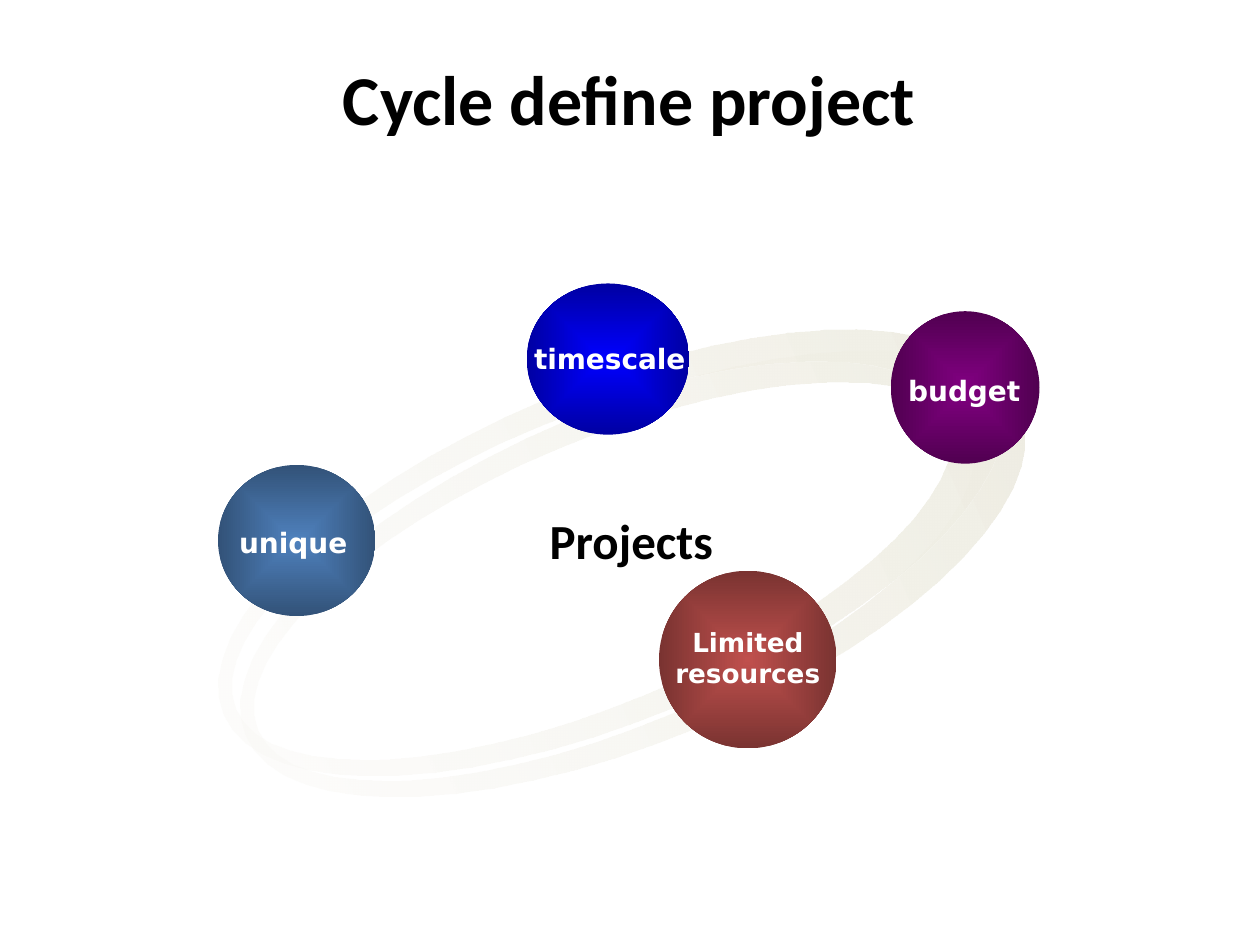
from dataclasses import dataclass
from math import cos, pi, sin

from lxml.etree import SubElement
from pptx import Presentation
from pptx.dml.color import RGBColor
from pptx.enum.shapes import MSO_SHAPE as Preset
from pptx.enum.text import MSO_AUTO_SIZE as AutoSize, PP_ALIGN as Align
from pptx.oxml.ns import qn
from pptx.util import Inches, Pt


@dataclass(frozen=True)
class Theme:
    heading_font: str = "Calibri"
    label_font: str = "DejaVu Sans"
    dark: str = "000000"
    light: str = "FFFFFF"
    ring_start: str = "FAF9F6"
    ring_end: str = "EEECE1"
    title_size: int = 40
    centre_size: int = 28
    label_size: int = 16
    small_size: int = 15
    space_size: int = 18


@dataclass(frozen=True)
class Box:
    left: float
    top: float
    width: float
    height: float

    def lengths(self):
        return [Inches(n) for n in (self.left, self.top, self.width, self.height)]


@dataclass(frozen=True)
class Stop:
    position: int
    color: str
    effect: str = ""
    percent: float = 100


@dataclass(frozen=True)
class Ball:
    box: Box
    color: str


@dataclass(frozen=True)
class Label:
    box: Box
    runs: tuple[tuple[str, int], ...]
    font: str = Theme.label_font
    color: str = Theme.light
    align: Align | None = None
    wrap: bool = True


THEME = Theme()
RING_ANGLE = 337.4
RING_POINTS = 60
RINGS = (Box(1.69, 3.23, 6.66, 2.65), Box(1.52, 3.06, 6.66, 2.65))
HOLE_SHIFT = -0.16
HOLE_RADII = (3.06, 1.14)
BALL_SHADE = 35.6

BALLS = (
    Ball(Box(4.18, 2.25, 1.29, 1.2), "0000FF"),
    Ball(Box(1.73, 3.69, 1.25, 1.2), "4F81BD"),
    Ball(Box(5.23, 4.53, 1.41, 1.41), "C0504D"),
    Ball(Box(7.07, 2.47, 1.18, 1.21), "800080"),
)

TITLE = Label(Box(2.56, 0.39, 4.8, 0.77), (("Cycle define project", THEME.title_size),),
              THEME.heading_font, THEME.dark, Align.RIGHT, False)
LABELS = (
    Label(Box(1.8, 4.12, 1.17, 0.37), (("unique", THEME.label_size),)),
    Label(Box(4.14, 2.66, 1.64, 0.37), (("timescale", THEME.label_size),)),
    Label(Box(7.11, 2.89, 1.17, 0.4),
          ((" ", THEME.space_size), ("budget", THEME.label_size)), wrap=False),
    Label(Box(5.23, 4.92, 1.41, 0.61), (("Limited resources", THEME.small_size),),
          align=Align.CENTER),
    Label(Box(3.75, 4, 2.52, 0.57), (("Projects", THEME.centre_size),),
          THEME.heading_font, THEME.dark, Align.CENTER),
)


def apply_gradient(shape, stops: tuple[Stop, ...], radial: bool) -> None:
    shape.shadow.inherit = False
    shape.line.fill.background()
    shape.fill.gradient()
    gradient = shape.fill._xPr.find(qn("a:gradFill"))
    for child in list(gradient):
        gradient.remove(child)
    gradient.set("rotWithShape", "1")
    stop_list = SubElement(gradient, qn("a:gsLst"))
    for stop in stops:
        entry = SubElement(stop_list, qn("a:gs"), pos=str(stop.position * 1000))
        color = SubElement(entry, qn("a:srgbClr"), val=stop.color)
        if stop.effect:
            SubElement(color, qn(f"a:{stop.effect}"), val=str(round(stop.percent * 1000)))
    if radial:
        focus = SubElement(gradient, qn("a:path"), {"path": "shape"})
        SubElement(focus, qn("a:fillToRect"), dict.fromkeys("ltrb", "50000"))
    else:
        SubElement(gradient, qn("a:lin"), ang="0", scaled="1")


def ellipse_points(center: tuple[float, float], radii: tuple[float, float],
                   direction: int) -> list[tuple[int, int]]:
    angles = [direction * 2 * pi * step / RING_POINTS for step in range(RING_POINTS)]
    return [(Inches(center[0] + radii[0] * sin(angle)),
             Inches(center[1] - radii[1] * cos(angle))) for angle in angles]


def draw_ring(slide, box: Box) -> None:
    radii = (box.width / 2, box.height / 2)
    center = (box.left + radii[0], box.top + radii[1])
    outer = ellipse_points(center, radii, -1)
    hole = ellipse_points((center[0] + HOLE_SHIFT, center[1]), HOLE_RADII, 1)
    builder = slide.shapes.build_freeform(*outer[0])
    builder.add_line_segments(outer[1:], close=True)
    builder.move_to(*hole[0])
    builder.add_line_segments(hole[1:], close=True)
    ring = builder.convert_to_shape()
    ring.rotation = RING_ANGLE
    apply_gradient(ring, (Stop(0, THEME.ring_start, "alpha", 36),
                          Stop(100, THEME.ring_end)), radial=False)


def draw_ball(slide, ball: Ball) -> None:
    shape = slide.shapes.add_shape(Preset.OVAL, *ball.box.lengths())
    apply_gradient(shape, (Stop(0, ball.color),
                           Stop(100, ball.color, "shade", BALL_SHADE)), radial=True)


def draw_label(slide, label: Label) -> None:
    frame = slide.shapes.add_textbox(*label.box.lengths()).text_frame
    frame.word_wrap = label.wrap
    frame.auto_size = AutoSize.SHAPE_TO_FIT_TEXT
    paragraph = frame.paragraphs[0]
    paragraph.alignment = label.align
    paragraph._p.get_or_add_pPr().set("rtl", "1")
    for text, size in label.runs:
        run = paragraph.add_run()
        run.text = text
        for name, value in {"name": label.font, "size": Pt(size), "bold": True}.items():
            setattr(run.font, name, value)
        run.font.color.rgb = RGBColor.from_string(label.color)


def main() -> None:
    presentation = Presentation()
    presentation.slide_width, presentation.slide_height = Inches(10), Inches(7.5)
    slide = presentation.slides.add_slide(presentation.slide_layouts[6])
    draw_label(slide, TITLE)
    for box in RINGS:
        draw_ring(slide, box)
    for ball in BALLS:
        draw_ball(slide, ball)
    for label in LABELS:
        draw_label(slide, label)
    presentation.save("out.pptx")


if __name__ == "__main__":
    main()
